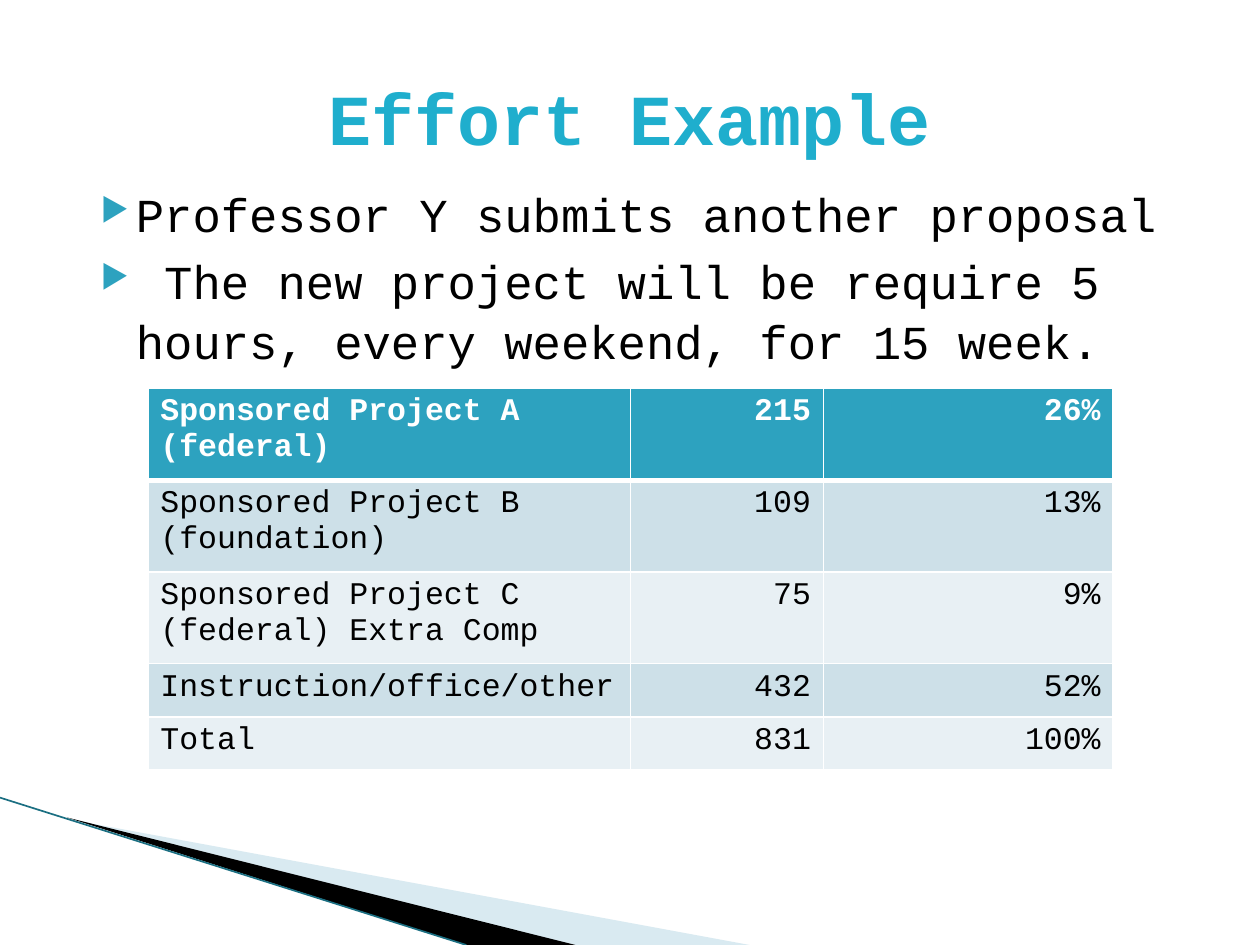
"""Build the Effort Example slide with its bullets, effort table and corner wedges."""

from dataclasses import dataclass

from lxml.etree import SubElement
from pptx import Presentation
from pptx.dml.color import RGBColor
from pptx.enum.shapes import MSO_CONNECTOR
from pptx.enum.text import MSO_ANCHOR, PP_ALIGN
from pptx.oxml.ns import qn
from pptx.slide import Slide
from pptx.table import _Cell
from pptx.text.text import TextFrame, _Paragraph
from pptx.util import Cm, Pt

FONT = "Courier New"
BLACK = RGBColor(0x00, 0x00, 0x00)
WHITE = RGBColor(0xFF, 0xFF, 0xFF)
TITLE_BLUE = RGBColor(0x1F, 0xAE, 0xCD)
ACCENT = RGBColor(0x2D, 0xA2, 0xBF)
BAND_DARK = RGBColor(0xCD, 0xE0, 0xE8)
BAND_LIGHT = RGBColor(0xE8, 0xF0, 0xF4)
WEDGE_BLUE = RGBColor(0xA0, 0xCB, 0xDC)
EDGE_TEAL = RGBColor(0x1B, 0x6F, 0x82)


@dataclass(frozen=True)
class Wedge:
    points: tuple[tuple[float, float], ...]
    color: RGBColor
    opacity: int


@dataclass(frozen=True)
class EffortRow:
    activity: str
    hours: str
    share: str
    height: float


WEDGES = (
    Wedge(((1.4, 16.52), (15.11, 19.05), (11.58, 19.05)), WEDGE_BLUE, 40),
    Wedge(((1.35, 16.48), (11.6, 19.05), (9.4, 19.05)), BLACK, 100),
)
BULLETS = (
    "Professor Y submits another proposal",
    " The new project will be require 5 hours, every weekend, for 15 week.",
)
COLUMN_WIDTHS = (9.73, 3.89, 5.84)
EFFORT_ROWS = (
    EffortRow("Sponsored Project A\n(federal)", "215", "26%", 1.85),
    EffortRow("Sponsored Project B\v(foundation)", "109", "13%", 1.85),
    EffortRow("Sponsored Project C\n(federal) Extra Comp", "75", "9%", 1.85),
    EffortRow("Instruction/office/other", "432", "52%", 1.07),
    EffortRow("Total", "831", "100%", 1.07),
)


def set_font(paragraph: _Paragraph, size: float, color: RGBColor, bold: bool = False) -> None:
    font = paragraph.font
    font.name, font.size, font.bold = FONT, Pt(size), bold
    font.color.rgb = color


def add_wedge(slide: Slide, wedge: Wedge) -> None:
    start, *others = [(Cm(x), Cm(y)) for x, y in wedge.points]
    builder = slide.shapes.build_freeform(*start)
    builder.add_line_segments(others)
    shape = builder.convert_to_shape()
    shape.shadow.inherit = False
    shape.line.fill.background()
    shape.fill.solid()
    shape.fill.fore_color.rgb = wedge.color
    if wedge.opacity < 100:
        color = shape.fill._xPr.find(qn("a:solidFill"))[0]
        SubElement(color, qn("a:alpha"), val=str(wedge.opacity * 1000))


def add_edge(slide: Slide) -> None:
    connector = slide.shapes.add_connector(
        MSO_CONNECTOR.STRAIGHT, Cm(0), Cm(16.08), Cm(9.4), Cm(19.05)
    )
    connector.line.color.rgb = EDGE_TEAL
    connector.line.width = Pt(0.95)
    SubElement(connector._element.spPr, qn("a:effectLst"))


def add_text_frame(
    slide: Slide, left: float, top: float, width: float, height: float
) -> TextFrame:
    shape = slide.shapes.add_textbox(Cm(left), Cm(top), Cm(width), Cm(height))
    shape.text_frame.word_wrap = True
    return shape.text_frame


def add_title(slide: Slide) -> None:
    frame = add_text_frame(slide, 1.27, 0.76, 22.86, 3.18)
    frame.vertical_anchor = MSO_ANCHOR.MIDDLE
    frame.text = "Effort Example"
    paragraph = frame.paragraphs[0]
    paragraph.alignment = PP_ALIGN.CENTER
    set_font(paragraph, 41, TITLE_BLUE, True)


def add_bullet(paragraph: _Paragraph) -> None:
    properties = paragraph._p.get_or_add_pPr()
    properties.set("marL", str(Cm(1.02)))
    properties.set("indent", str(Cm(-0.71)))
    color = SubElement(properties, qn("a:buClr"))
    SubElement(color, qn("a:srgbClr"), val=str(ACCENT))
    SubElement(properties, qn("a:buSzPct"), val="68000")
    SubElement(properties, qn("a:buChar"), char="▶")


def add_body(slide: Slide) -> None:
    frame = add_text_frame(slide, 1.47, 3.56, 22.66, 4.2)
    frame.text = "\n".join(BULLETS)
    for index, paragraph in enumerate(frame.paragraphs):
        add_bullet(paragraph)
        paragraph.line_spacing = 1.05
        paragraph.space_before = Pt(4 if index else 0)
        set_font(paragraph, 27, BLACK)


def set_borders(cell: _Cell, top: int, bottom: int) -> None:
    properties = cell._tc.get_or_add_tcPr()
    widths = {"lnL": 1, "lnR": 1, "lnT": top, "lnB": bottom}
    for index, (side, width) in enumerate(widths.items()):
        line = properties.makeelement(qn(f"a:{side}"), {"w": str(Pt(width))})
        fill = SubElement(line, qn("a:solidFill"))
        SubElement(fill, qn("a:srgbClr"), val=str(WHITE))
        properties.insert(index, line)


def fill_cell(cell: _Cell, text: str, row: int, column: int) -> None:
    header = row == 0
    cell.text = text
    cell.fill.solid()
    cell.fill.fore_color.rgb = ACCENT if header else (BAND_LIGHT, BAND_DARK)[row % 2]
    for paragraph in cell.text_frame.paragraphs:
        paragraph.alignment = PP_ALIGN.RIGHT if column else PP_ALIGN.LEFT
        set_font(paragraph, 18, WHITE if header else BLACK, header)
    set_borders(cell, 3 if row == 1 else 1, 3 if header else 1)


def add_effort_table(slide: Slide) -> None:
    height = sum(row.height for row in EFFORT_ROWS)
    table = slide.shapes.add_table(
        len(EFFORT_ROWS), len(COLUMN_WIDTHS),
        Cm(2.98), Cm(7.83), Cm(sum(COLUMN_WIDTHS)), Cm(height),
    ).table
    for column, width in zip(table.columns, COLUMN_WIDTHS):
        column.width = Cm(width)
    for row_index, row in enumerate(EFFORT_ROWS):
        table.rows[row_index].height = Cm(row.height)
        for column_index, text in enumerate((row.activity, row.hours, row.share)):
            fill_cell(table.cell(row_index, column_index), text, row_index, column_index)


def main() -> None:
    presentation = Presentation()
    presentation.slide_width, presentation.slide_height = Cm(25.4), Cm(19.05)
    slide = presentation.slides.add_slide(presentation.slide_layouts[6])
    for wedge in WEDGES:
        add_wedge(slide, wedge)
    add_edge(slide)
    add_body(slide)
    add_title(slide)
    add_effort_table(slide)
    presentation.save("out.pptx")


if __name__ == "__main__":
    main()
